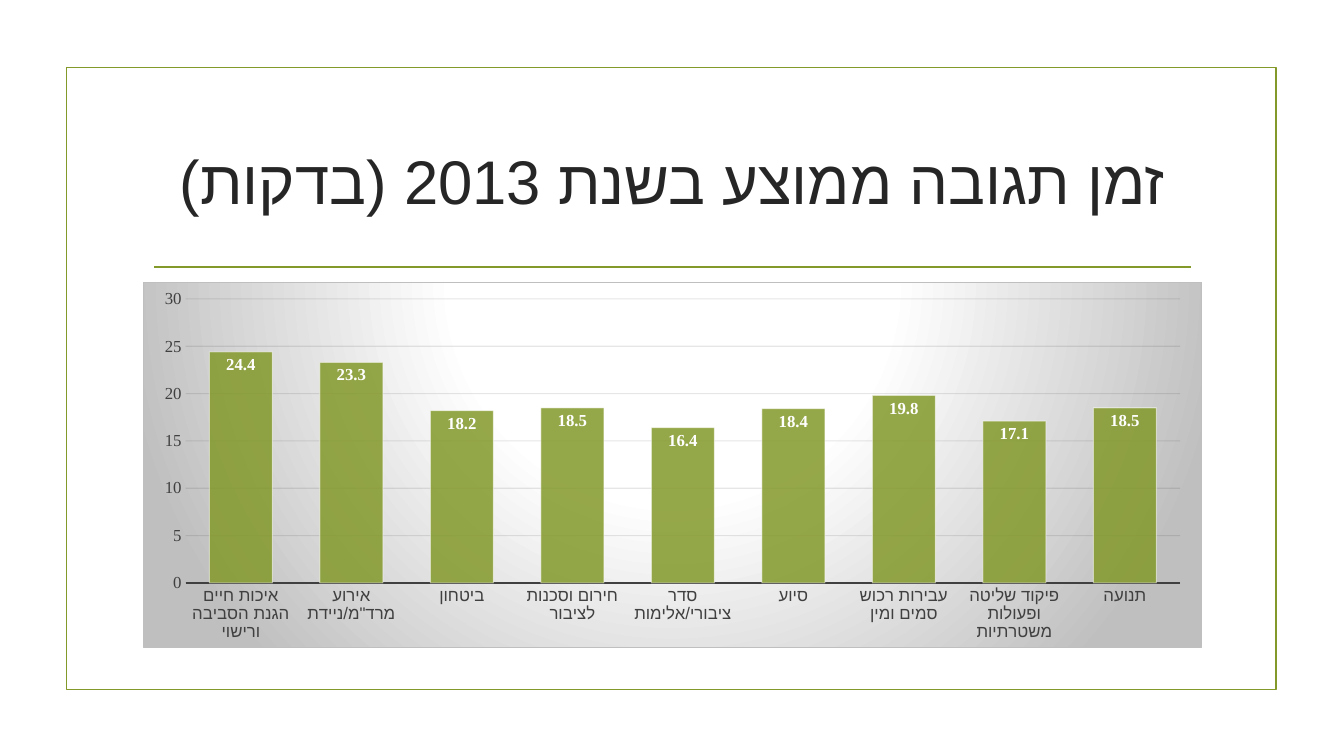
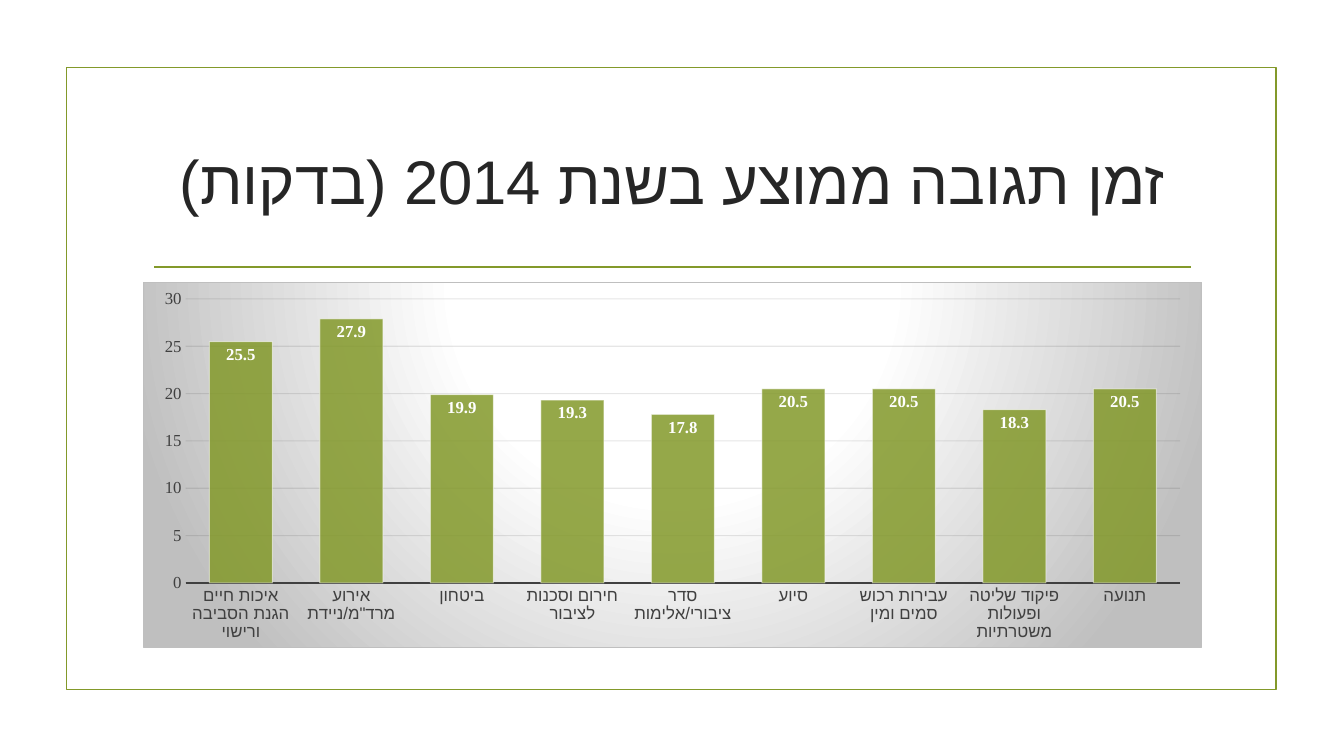
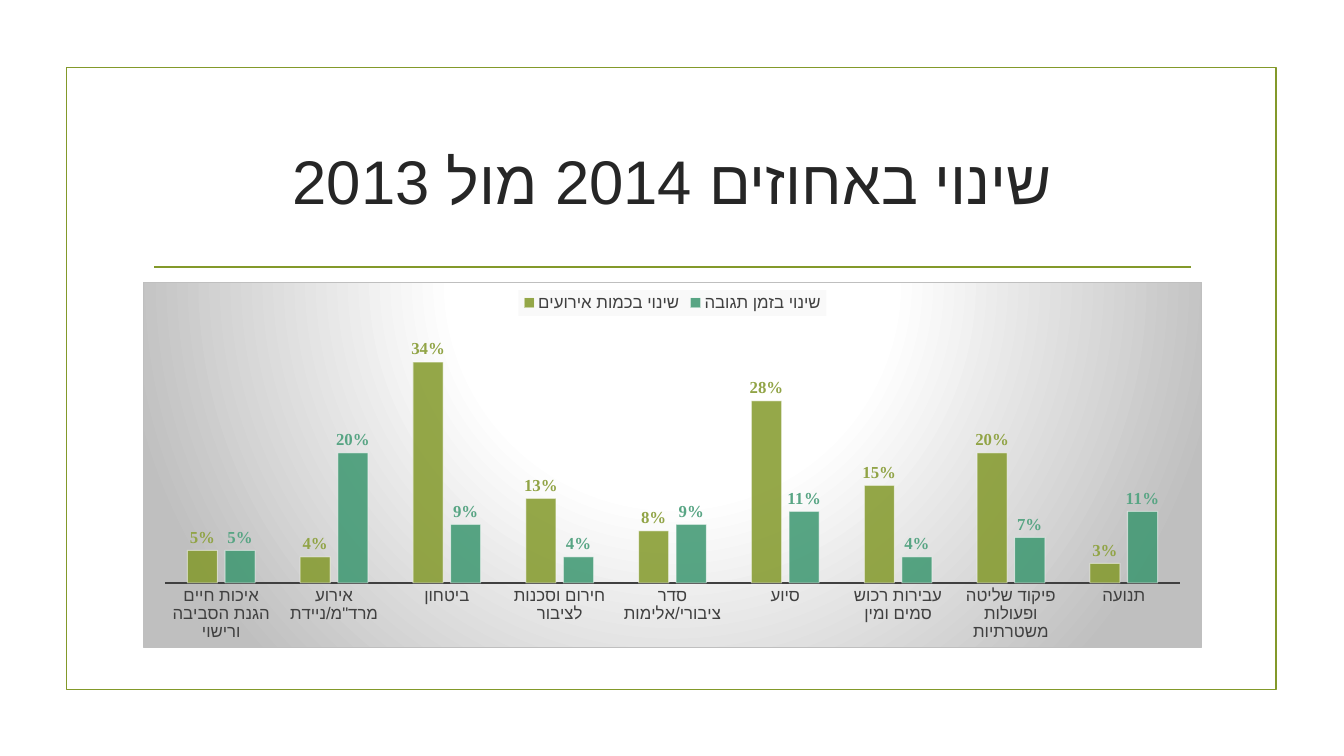
"""Build three slides of column charts on response times."""
from dataclasses import dataclass
from typing import Optional

from lxml import etree
from pptx import Presentation
from pptx import util as u
from pptx.chart.chart import Chart
from pptx.chart.data import CategoryChartData
from pptx.dml.color import RGBColor
from pptx.dml.fill import FillFormat
from pptx.dml.line import LineFormat
from pptx.enum import chart as charts
from pptx.enum import shapes, text
from pptx.oxml import parse_xml
from pptx.oxml.ns import nsdecls, qn
from pptx.slide import Slide
from pptx.text.text import Font

COLORS = {
    "green": "83992A",
    "teal": "3C9770",
    "green_label": "91A446",
    "teal_label": "58A584",
    "title": "262626",
    "axis": "404040",
    "grid": "0D0D0D",
    "border": "BFBFBF",
    "legend": "F2F2F2",
    "white": "FFFFFF",
    "black": "000000",
}
FONT = "Times New Roman"
HEBREW_FONT = "Arial"
LEFT, WIDTH = u.Inches(1.42), u.Inches(10.5)
CATEGORIES = (
    "איכות חיים הגנת הסביבה ורישוי",
    'אירוע מרד"מ/ניידת',
    "ביטחון",
    "חירום וסכנות לציבור",
    "סדר ציבורי/אלימות",
    "סיוע",
    "עבירות רכוש סמים ומין",
    "פיקוד שליטה ופעולות משטרתיות",
    "תנועה",
)


@dataclass(frozen=True)
class Series:
    """A chart series with its bar and label colours."""

    name: str
    values: tuple[float, ...]
    color: str
    label_color: str


@dataclass(frozen=True)
class ChartStyle:
    """The settings in which the two kinds of chart differ."""

    gap: int
    overlap: int
    maximum: float
    label_position: charts.XL_LABEL_POSITION
    number_format: str
    value_axis: bool
    legend: bool


@dataclass(frozen=True)
class ChartSlide:
    """A title with the chart below it."""

    title: str
    style: ChartStyle
    series: tuple[Series, ...]


MINUTES = ChartStyle(75, 40, 30, charts.XL_LABEL_POSITION.INSIDE_END, "General", True, False)
CHANGE = ChartStyle(150, -25, 0.4, charts.XL_LABEL_POSITION.OUTSIDE_END, "0%", False, True)

SLIDES = (
    ChartSlide("זמן תגובה ממוצע בשנת 2013 (בדקות)", MINUTES, (
        Series("Series 1", (24.4, 23.3, 18.2, 18.5, 16.4, 18.4, 19.8, 17.1, 18.5),
               "green", "white"),
    )),
    ChartSlide("זמן תגובה ממוצע בשנת 2014 (בדקות)", MINUTES, (
        Series("Series 1", (25.5, 27.9, 19.9, 19.3, 17.8, 20.5, 20.5, 18.3, 20.5),
               "green", "white"),
    )),
    ChartSlide("שינוי באחוזים 2014 מול 2013", CHANGE, (
        Series("שינוי בכמות אירועים", (0.05, 0.04, 0.34, 0.13, 0.08, 0.28, 0.15, 0.2, 0.03),
               "green", "green_label"),
        Series("שינוי בזמן תגובה", (0.05, 0.2, 0.09, 0.04, 0.09, 0.11, 0.04, 0.07, 0.11),
               "teal", "teal_label"),
    )),
)


def set_fill(fill: FillFormat, color: str, opacity: Optional[int] = None) -> None:
    """Fill with a solid colour, at an opacity in percent if given."""
    fill.solid()
    fill.fore_color.rgb = RGBColor.from_string(COLORS[color])
    if opacity is not None:
        value = fill._xPr.find(f"{qn('a:solidFill')}/{qn('a:srgbClr')}")
        etree.SubElement(value, qn("a:alpha")).set("val", str(opacity * 1000))


def set_line(line: LineFormat, color: str, width: float, opacity: Optional[int] = None) -> None:
    """Set the colour, width in points and opacity of a line."""
    line.width = u.Pt(width)
    set_fill(line.fill, color, opacity)


def set_font(font: Font, size: int, color: str, bold: bool = False) -> None:
    """Set the Latin and Hebrew typefaces, size, colour and weight."""
    font.name, font.size, font.bold = FONT, u.Pt(size), bold
    font.color.rgb = RGBColor.from_string(COLORS[color])
    etree.SubElement(font._rPr, qn("a:cs")).set("typeface", HEBREW_FONT)


def add_frame(slide: Slide) -> None:
    """Draw the slide border and the rule below the title."""
    frame = slide.shapes.add_shape(
        shapes.MSO_SHAPE.RECTANGLE, u.Inches(0.66), u.Inches(0.67), u.Inches(12), u.Inches(6.17))
    frame.shadow.inherit = False
    frame.fill.background()
    set_line(frame.line, "green", 1.25)
    rule = slide.shapes.add_connector(
        shapes.MSO_CONNECTOR.STRAIGHT,
        u.Inches(1.53), u.Inches(2.65), u.Inches(11.81), u.Inches(2.65))
    set_line(rule.line, "green", 1.25)
    etree.SubElement(rule._element.spPr, qn("a:effectLst"))


def add_title(slide: Slide, title: str) -> None:
    """Write the centred right-to-left title."""
    box = slide.shapes.add_textbox(LEFT, u.Inches(1.07), WIDTH, u.Inches(1.43))
    frame = box.text_frame
    frame.word_wrap = True
    frame.vertical_anchor = text.MSO_ANCHOR.MIDDLE
    frame.text = title
    paragraph = frame.paragraphs[0]
    paragraph.alignment = text.PP_ALIGN.CENTER
    paragraph._p.get_or_add_pPr().set("rtl", "1")
    set_font(paragraph.runs[0].font, 44, "title")


def set_background(chart: Chart) -> None:
    """Give the chart area its radial gradient and border."""
    stops = "".join(
        f'<a:gs pos="{position * 1000}"><a:srgbClr val="{COLORS[color]}"/></a:gs>'
        for position, color in ((0, "white"), (39, "white"), (100, "border")))
    chart._chartSpace.find(qn("c:chart")).addnext(parse_xml(
        f'<c:spPr {nsdecls("c", "a")}><a:gradFill><a:gsLst>{stops}</a:gsLst>'
        '<a:path path="circle"><a:fillToRect l="50000" t="-80000" r="50000" b="180000"/></a:path>'
        f'</a:gradFill><a:ln w="{u.Pt(0.75)}"><a:solidFill><a:srgbClr val="{COLORS["border"]}"/>'
        "</a:solidFill></a:ln></c:spPr>"))


def set_axes(chart: Chart, style: ChartStyle) -> None:
    """Format the category and value axes."""
    category_axis, value_axis = chart.category_axis, chart.value_axis
    for axis in (category_axis, value_axis):
        axis.major_tick_mark = axis.minor_tick_mark = charts.XL_TICK_MARK.NONE
        set_font(axis.tick_labels.font, 12, "axis")
    set_line(category_axis.format.line, "axis", 1.5)
    value_axis.minimum_scale, value_axis.maximum_scale = 0, style.maximum
    value_axis.tick_labels.number_format = style.number_format
    value_axis.tick_labels.number_format_is_linked = False
    value_axis.format.line.fill.background()
    value_axis.visible = value_axis.has_major_gridlines = style.value_axis
    if style.value_axis:
        set_line(value_axis.major_gridlines.format.line, "grid", 0.75, 10)


def set_legend(chart: Chart) -> None:
    """Show a lightly shaded legend above the plot."""
    chart.has_legend = True
    legend = chart.legend
    legend.position = charts.XL_LEGEND_POSITION.TOP
    legend.include_in_layout = False
    set_font(legend.font, 12, "axis")
    area = parse_xml(f'<c:spPr {nsdecls("c", "a")}/>')
    legend._element.find(qn("c:overlay")).addnext(area)
    set_fill(FillFormat.from_fill_parent(area), "legend", 39)


def add_chart(slide: Slide, style: ChartStyle, series: tuple[Series, ...]) -> None:
    """Draw the clustered columns with their labels."""
    data = CategoryChartData(number_format=style.number_format)
    data.categories = CATEGORIES
    for item in series:
        data.add_series(item.name, item.values)
    chart = slide.shapes.add_chart(
        charts.XL_CHART_TYPE.COLUMN_CLUSTERED, LEFT, u.Inches(2.8), WIDTH, u.Inches(3.63),
        data).chart
    set_font(chart.font, 10, "black")
    chart.has_title = chart.has_legend = False
    set_background(chart)
    set_axes(chart, style)
    if style.legend:
        set_legend(chart)
    plot = chart.plots[0]
    plot.gap_width, plot.overlap = style.gap, style.overlap
    plot.vary_by_categories = False
    for columns, item in zip(plot.series, series):
        set_fill(columns.format.fill, item.color, 85)
        set_line(columns.format.line, "white", 0.75, 50)
        labels = columns.data_labels
        labels.show_value = True
        labels.position = style.label_position
        labels.number_format = style.number_format
        labels.number_format_is_linked = False
        set_font(labels.font, 12, item.label_color, bold=True)


def main() -> None:
    """Build and save the presentation."""
    presentation = Presentation()
    presentation.slide_width, presentation.slide_height = u.Inches(13.33), u.Inches(7.5)
    for content in SLIDES:
        slide = presentation.slides.add_slide(presentation.slide_layouts[6])
        add_frame(slide)
        add_title(slide, content.title)
        add_chart(slide, content.style, content.series)
    presentation.save("out.pptx")


if __name__ == "__main__":
    main()
